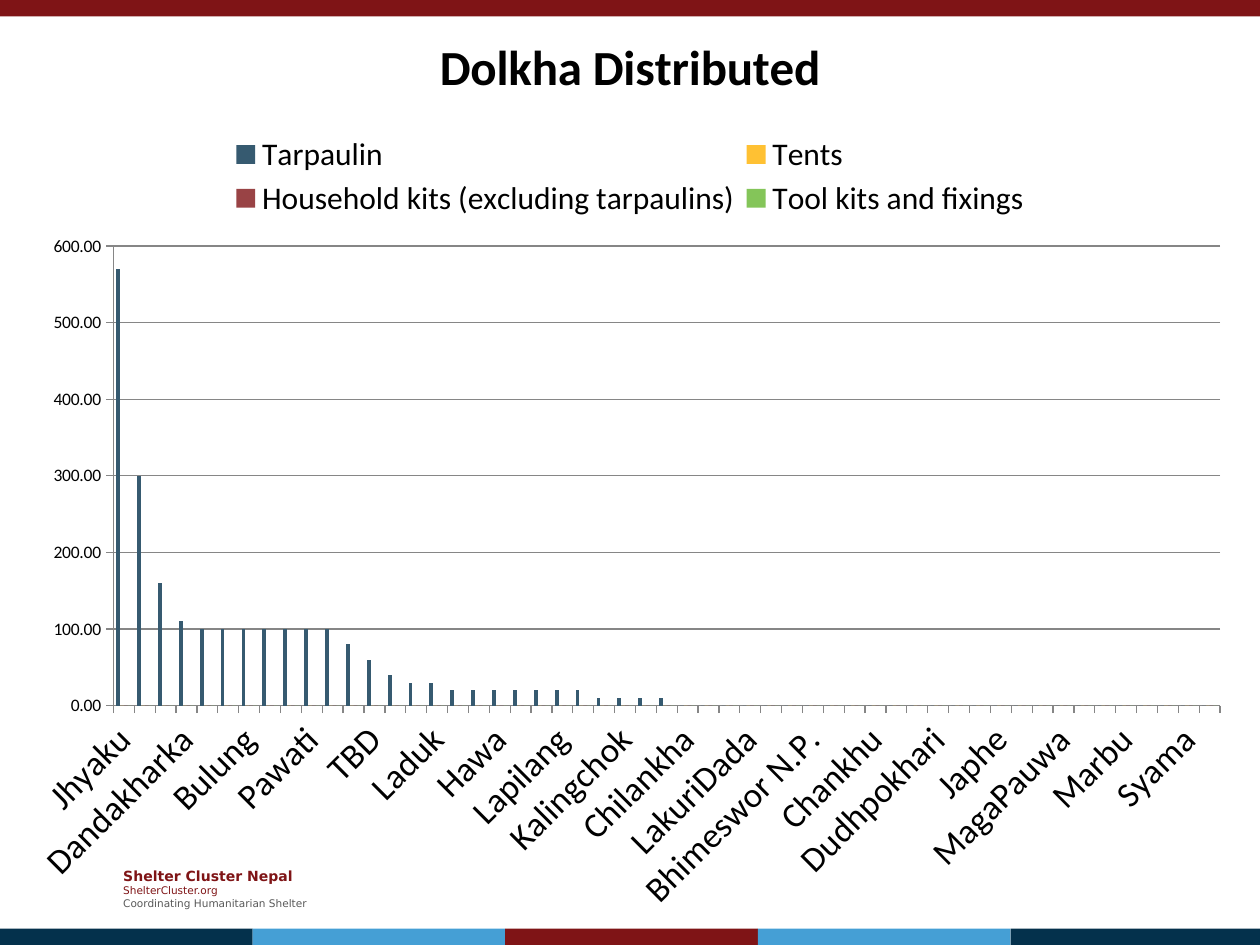
import pptx
import pptx.chart.data
import pptx.dml.color
import pptx.enum.chart
import pptx.enum.shapes
import pptx.enum.text
import pptx.oxml
import pptx.oxml.ns
import pptx.util

WIDTH, HEIGHT = 10, 7.5
BAND = 0.13
STRIPE_PITCH = 2.005

COLORS = {
    "red": "7F1416", "navy": "04314C", "sky": "459FD5", "gray": "595959",
    "black": "000000", "axis": "868686", "tarpaulin": "365A70",
    "tents": "FFC133", "household": "994345", "tools": "84C559",
}
STRIPES = ["navy", "sky", "red", "sky", "navy"]

PLACES = [
    "Jhyaku", "Sunakhani", "Bigu", "Dandakharka", "Babare", "Bhedapu",
    "Bulung", "Jiri", "Melung", "Pawati", "Lamabagar", "Orang", "TBD",
    "Gairimudi", "Katakuti", "Laduk", "Alampu", "Bhirkot", "Hawa", "Jhule",
    "Khare", "Lapilang", "Suri", "Namdu", "Kalingchok", "SusmaChhemawati",
    "Fasku", "Chilankha", "Kabhre", "Khopachagu", "LakuriDada", "Sahare",
    "Sailungeswor", "Bhimeswor N.P.", "Bhusaphedi", "Bocha", "Chankhu",
    "Chhetrapa", "Chyama", "Dudhpokhari", "GauriSankar", "GhangSukathokar",
    "Japhe", "Jugu", "Lamidada", "MagaPauwa", "Mali", "Malu", "Marbu",
    "Mirge", "Sundrawati", "Syama", "Thulopatal",
]
TARPAULINS = [570, 300, 160, 110] + [100] * 7 + [80, 60, 40, 30, 30] + [20] * 7 + [10] * 4
# Series name, colour and the leading values; the remaining places received none
SERIES = [
    ("Tarpaulin", "tarpaulin", TARPAULINS),
    ("Tents", "tents", []),
    ("Household kits (excluding tarpaulins)", "household", []),
    ("Tool kits and fixings", "tools", []),
]
FOOTER = [
    ("Shelter Cluster Nepal", 8, True, "red"),
    ("ShelterCluster.org", 6, False, "red"),
    ("Coordinating Humanitarian Shelter", 6, False, "gray"),
]


def color(name):
    return pptx.dml.color.RGBColor.from_string(COLORS[name])


def frame(left, top, width, height):
    return [pptx.util.Inches(length) for length in (left, top, width, height)]


def style_font(font, size, name="black", face="Calibri", bold=False):
    font.size = pptx.util.Pt(size)
    font.name = face
    font.bold = bold
    font.color.rgb = color(name)


def add_band(page, left, top, width, name):
    band = page.shapes.add_shape(
        pptx.enum.shapes.MSO_SHAPE.RECTANGLE, *frame(left, top, width, BAND))
    band.shadow.inherit = False
    band.fill.solid()
    band.fill.fore_color.rgb = color(name)
    band.line.fill.background()


def add_footer(page):
    box = page.shapes.add_textbox(*frame(0.88, 6.83, 1.73, 0.44))
    text = box.text_frame
    text.word_wrap = False
    text.vertical_anchor = pptx.enum.text.MSO_ANCHOR.MIDDLE
    for index, (words, size, bold, name) in enumerate(FOOTER):
        para = text.add_paragraph() if index else text.paragraphs[0]
        span = para.add_run()
        span.text = words
        style_font(span.font, size, name, "DejaVu Sans", bold)


def place(element, position, target=None, **shares):
    """Give a chart part a manual layout in shares of the chart's size."""
    for old in element.findall(pptx.oxml.ns.qn("c:layout")):
        element.remove(old)
    inner = f'<c:layoutTarget val="{target}"/>' if target else ""
    inner += "".join(f'<c:{key}Mode val="edge"/>' for key in "xy")
    inner += "".join(f'<c:{key} val="{share}"/>' for key, share in shares.items())
    element.insert(position, pptx.oxml.parse_xml(
        f'<c:layout {pptx.oxml.ns.nsdecls("c")}>'
        f"<c:manualLayout>{inner}</c:manualLayout></c:layout>"))


def style_axis(axis, size):
    axis.major_tick_mark = pptx.enum.chart.XL_TICK_MARK.OUTSIDE
    axis.minor_tick_mark = pptx.enum.chart.XL_TICK_MARK.NONE
    style_font(axis.tick_labels.font, size)
    style_line(axis.format.line)


def style_line(line):
    line.color.rgb = color("axis")
    line.width = pptx.util.Pt(0.75)


def add_distribution_chart(page):
    data = pptx.chart.data.CategoryChartData()
    data.categories = PLACES
    for name, _, values in SERIES:
        data.add_series(name, values + [0] * (len(PLACES) - len(values)))
    chart = page.shapes.add_chart(
        pptx.enum.chart.XL_CHART_TYPE.COLUMN_CLUSTERED,
        *frame(0.12, 0, 9.76, HEIGHT - BAND), data).chart
    style_font(chart.font, 10)

    # Title
    span = chart.chart_title.text_frame.paragraphs[0].add_run()
    span.text = "Dolkha Distributed"
    style_font(span.font, 28, bold=True)

    # Legend
    chart.has_legend = True
    chart.legend.position = pptx.enum.chart.XL_LEGEND_POSITION.TOP
    chart.legend.include_in_layout = False
    style_font(chart.legend.font, 18)
    place(chart.legend._element, 1, x=0.17, y=0.14, w=0.66, h=0.1)

    # Axes
    style_axis(chart.category_axis, 20)
    chart.category_axis.tick_labels.font._element.getparent().getparent().getparent() \
        .find(pptx.oxml.ns.qn("a:bodyPr")).set("rot", "-2700000")
    values = chart.value_axis
    style_axis(values, 10)
    values.minimum_scale, values.maximum_scale, values.major_unit = 0, 600, 100
    values.tick_labels.number_format = "#,##0.00"
    values.tick_labels.number_format_is_linked = False
    values.has_major_gridlines = True
    style_line(values.major_gridlines.format.line)

    # Columns
    plot = chart.plots[0]
    plot.gap_width = 150
    plot.overlap = 0
    plot.vary_by_categories = False
    for series, (_, name, _) in zip(plot.series, SERIES):
        series.format.fill.solid()
        series.format.fill.fore_color.rgb = color(name)
    place(plot._element.getparent(), 0, "inner", x=0.08, y=0.265, w=0.9, h=0.495)


def main():
    deck = pptx.Presentation()
    deck.slide_width = pptx.util.Inches(WIDTH)
    deck.slide_height = pptx.util.Inches(HEIGHT)
    page = deck.slides.add_slide(deck.slide_layouts[6])

    # Footer text and coloured bands
    add_footer(page)
    add_band(page, 0, 0, WIDTH, "red")
    for index, name in enumerate(STRIPES):
        left = index * STRIPE_PITCH
        add_band(page, left, HEIGHT - BAND, min(STRIPE_PITCH, WIDTH - left), name)

    add_distribution_chart(page)
    deck.save("out.pptx")


if __name__ == "__main__":
    main()
